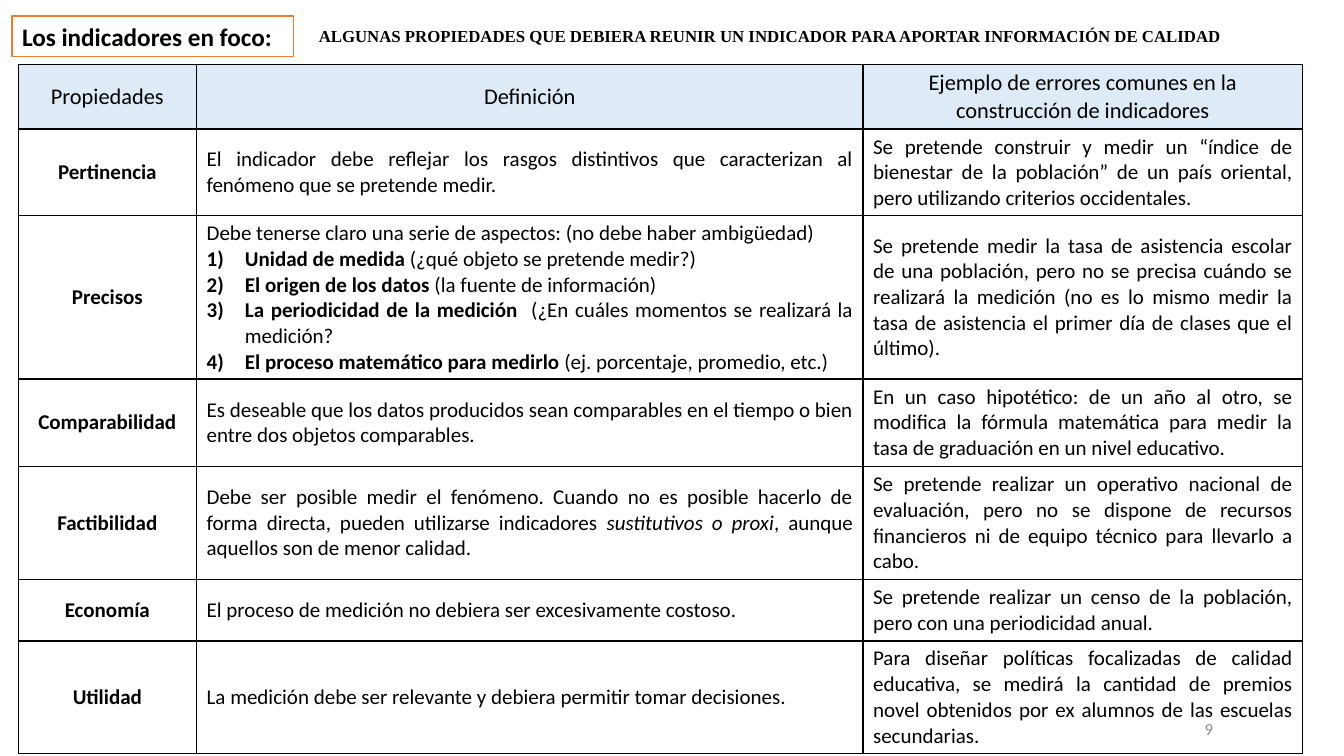
"""Build the slide on the properties of a good indicator."""
import pptx
import pptx.util
import pptx.dml.color
import pptx.enum.shapes
import pptx.enum.text
import pptx.oxml
import pptx.oxml.ns
from lxml import etree

Inches = pptx.util.Inches
ALIGN = pptx.enum.text.PP_ALIGN
MIDDLE = pptx.enum.text.MSO_ANCHOR.MIDDLE

COLORS = {"black": "000000", "white": "FFFFFF", "header": "DEEBF7",
          "accent": "ED7D31", "number": "8C8C8C"}
BODY = {"name": "Calibri", "size": 15, "color": "black"}
HEAD = {**BODY, "size": 16}
BOLD = {"bold": True}
ITALIC = {"italic": True}

HEADERS = ["Propiedades", "Definición",
           "Ejemplo de errores comunes en la construcción de indicadores"]
PRECISION = [
    ("Unidad de medida", " (¿qué objeto se pretende medir?)"),
    ("El origen de los datos", " (la fuente de información)"),
    ("La periodicidad de la medición ", " (¿En cuáles momentos se realizará la medición?"),
    ("El proceso matemático para medirlo ", "(ej. porcentaje, promedio, etc.)"),
]
PROPERTIES = [
    ("Pertinencia",
     [("El indicador debe reflejar los rasgos distintivos que caracterizan al "
       "fenómeno que se pretende medir.", {})],
     "Se pretende construir y medir un “índice de bienestar de la población” de "
     "un país oriental, pero utilizando criterios occidentales."),
    ("Precisos",
     [("Debe tenerse claro una serie de aspectos: (no debe haber ambigüedad)", {})],
     "Se pretende medir la tasa de asistencia escolar de una población, pero no se "
     "precisa cuándo se realizará la medición (no es lo mismo medir la tasa de "
     "asistencia el primer día de clases que el último)."),
    ("Comparabilidad",
     [("Es deseable que los datos producidos sean comparables en el tiempo o bien "
       "entre dos objetos comparables.", {})],
     "En un caso hipotético: de un año al otro, se modifica la fórmula matemática "
     "para medir la tasa de graduación en un nivel educativo."),
    ("Factibilidad",
     [("Debe ser posible medir el fenómeno. Cuando no es posible hacerlo de forma "
       "directa, pueden utilizarse indicadores ", {}),
      ("sustitutivos o proxi", ITALIC),
      (", aunque aquellos son de menor calidad.", {})],
     "Se pretende realizar un operativo nacional de evaluación, pero no se dispone "
     "de recursos financieros ni de equipo técnico para llevarlo a cabo."),
    ("Economía",
     [("El proceso de medición no debiera ser excesivamente costoso.", {})],
     "Se pretende realizar un censo de la población, pero con una periodicidad anual."),
    ("Utilidad",
     [("La medición debe ser relevante y debiera permitir tomar decisiones.", {})],
     "Para diseñar políticas focalizadas de calidad educativa, se medirá la cantidad "
     "de premios novel obtenidos por ex alumnos de las escuelas secundarias."),
]
COLUMNS = [1.77, 6.61, 4.36]
ROWS = [0.64, 0.86, 1.62, 0.87, 1.12, 0.61, 1.12]
TABLE_AT = (0.18, 0.64)
TEXTS = [
    ((2.91, -0.46, 9.46, 1.64), ALIGN.CENTER,
     "ALGUNAS PROPIEDADES QUE DEBIERA REUNIR UN INDICADOR PARA APORTAR "
     "INFORMACIÓN DE CALIDAD",
     {"name": "Times New Roman", "size": 12, "color": "black", "bold": True}),
    ((11.85, 7.08, 1.06, 0.3), ALIGN.LEFT, "9", {**BODY, "size": 12, "color": "number"}),
]
FOCUS_AT = (0.12, 0.16, 2.79, 0.4)
FOCUS = "Los indicadores en foco:"


def rgb(key):
    return pptx.dml.color.RGBColor.from_string(COLORS[key])


def write(p, runs, align, base=BODY):
    p.alignment = align
    for text, extra in runs:
        r = p.add_run()
        r.text = text
        for key, value in {**base, **extra}.items():
            if key == "color":
                r.font.color.rgb = rgb(value)
            else:
                setattr(r.font, key, pptx.util.Pt(value) if key == "size" else value)


def number(p):
    pPr = p._p.get_or_add_pPr()
    pPr.set("marL", str(Inches(0.38)))
    pPr.set("indent", str(-Inches(0.38)))
    bullet = etree.SubElement(pPr, pptx.oxml.ns.qn("a:buAutoNum"))
    bullet.set("type", "arabicParenR")


def border(cell):
    tcPr = cell._tc.get_or_add_tcPr()
    for i, side in enumerate(("lnL", "lnR", "lnT", "lnB")):
        tcPr.insert(i, pptx.oxml.parse_xml(
            f'<a:{side} {pptx.oxml.ns.nsdecls("a")} w="12700"><a:solidFill>'
            f'<a:srgbClr val="{COLORS["black"]}"/></a:solidFill></a:{side}>'))


def add_table(s):
    size = (sum(COLUMNS), sum(ROWS))
    table = s.shapes.add_table(len(ROWS), len(COLUMNS),
                               *map(Inches, TABLE_AT + size)).table
    table.first_row = table.horz_banding = False
    for column, width in zip(table.columns, COLUMNS):
        column.width = Inches(width)
    for row, height in zip(table.rows, ROWS):
        row.height = Inches(height)
    for cell in table.iter_cells():
        cell.vertical_anchor = MIDDLE
        cell.fill.background()
        border(cell)
    for c, header in enumerate(HEADERS):
        cell = table.cell(0, c)
        cell.fill.solid()
        cell.fill.fore_color.rgb = rgb("header")
        write(cell.text_frame.paragraphs[0], [(header, {})], ALIGN.CENTER, HEAD)
    for i, (name, definition, error) in enumerate(PROPERTIES, 1):
        contents = [([(name, BOLD)], ALIGN.CENTER), (definition, ALIGN.JUSTIFY),
                    ([(error, {})], ALIGN.JUSTIFY)]
        for c, (runs, align) in enumerate(contents):
            write(table.cell(i, c).text_frame.paragraphs[0], runs, align)
        if name == "Precisos":
            for term, detail in PRECISION:
                p = table.cell(i, 1).text_frame.add_paragraph()
                write(p, [(term, BOLD), (detail, {})], ALIGN.JUSTIFY)
                number(p)


def main():
    prs = pptx.Presentation()
    prs.slide_width, prs.slide_height = Inches(13.33), Inches(7.5)
    s = prs.slides.add_slide(prs.slide_layouts[6])
    for box, align, text, font in TEXTS:
        tf = s.shapes.add_textbox(*map(Inches, box)).text_frame
        tf.word_wrap = True
        tf.vertical_anchor = MIDDLE
        write(tf.paragraphs[0], [(text, {})], align, font)
    add_table(s)
    sp = s.shapes.add_shape(pptx.enum.shapes.MSO_SHAPE.RECTANGLE, *map(Inches, FOCUS_AT))
    sp.shadow.inherit = False
    sp.fill.solid()
    sp.fill.fore_color.rgb = rgb("white")
    sp.line.color.rgb = rgb("accent")
    sp.line.width = pptx.util.Pt(1)
    tf = sp.text_frame
    tf.word_wrap = True
    tf.vertical_anchor = pptx.enum.text.MSO_ANCHOR.TOP
    tf.auto_size = pptx.enum.text.MSO_AUTO_SIZE.SHAPE_TO_FIT_TEXT
    write(tf.paragraphs[0], [(FOCUS, {"size": 18, **BOLD})], ALIGN.JUSTIFY)
    prs.save("out.pptx")


if __name__ == "__main__":
    main()
